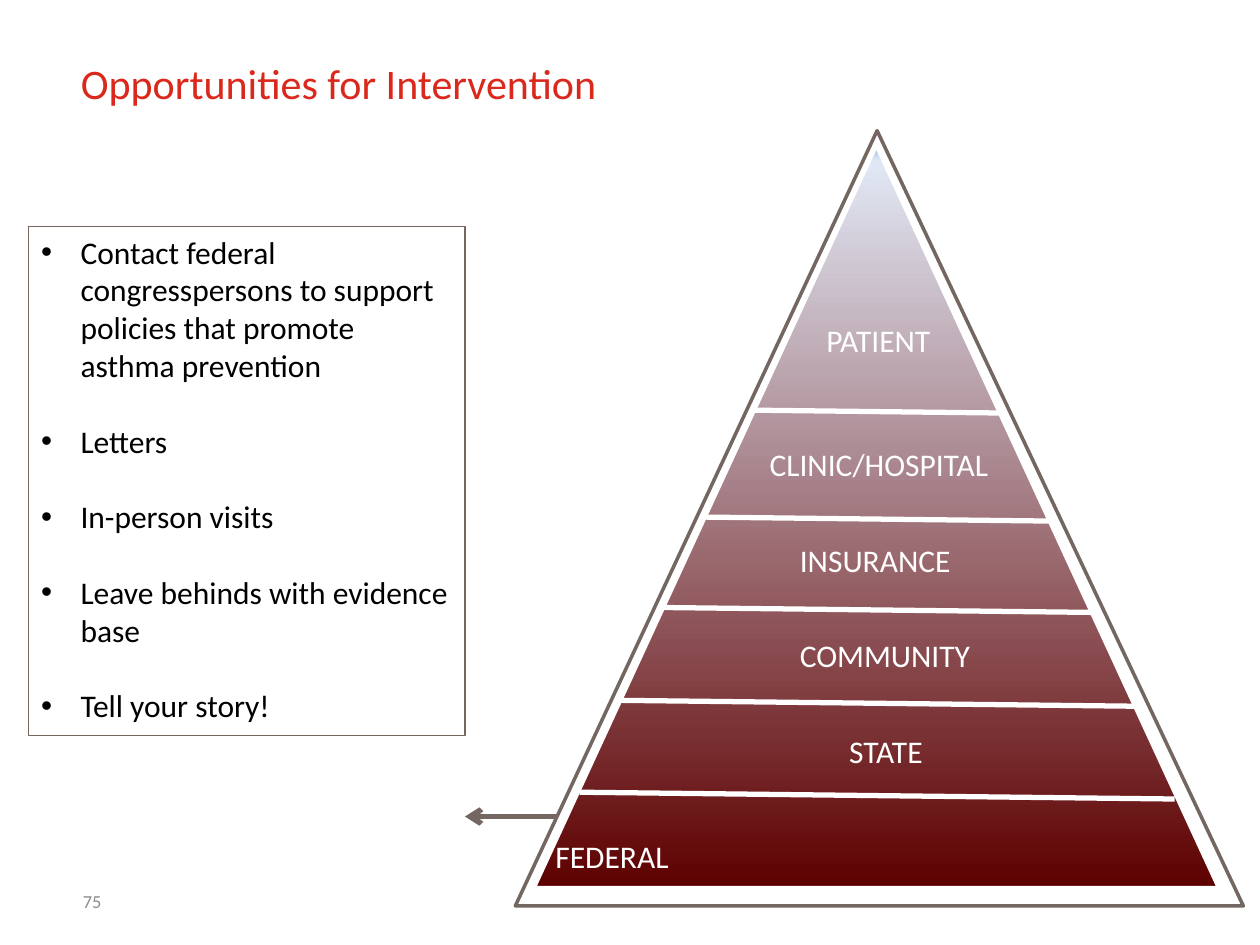
from lxml import etree
from pptx import Presentation
from pptx.dml.color import RGBColor
from pptx.enum.shapes import MSO_CONNECTOR, MSO_SHAPE
from pptx.enum.text import MSO_ANCHOR, PP_ALIGN
from pptx.oxml import parse_xml
from pptx.oxml.ns import nsdecls, qn
from pptx.util import Pt

STRAIGHT = MSO_CONNECTOR.STRAIGHT
TRIANGLE, RECTANGLE = MSO_SHAPE.ISOSCELES_TRIANGLE, MSO_SHAPE.RECTANGLE
TOP, MIDDLE = MSO_ANCHOR.TOP, MSO_ANCHOR.MIDDLE
LEFT = PP_ALIGN.LEFT

FONT = "Calibri"
COLORS = {
    "title": "DA291C", "text": "000000", "number": "8C8C8C",
    "outline": "746661", "white": "FFFFFF",
}
PYRAMID_GRADIENT = [(0, "9AB5E4"), (2, "E1E8F5"), (100, "5E0000")]

# Label, left, top and width inside the pyramid
LEVELS = [
    ("PATIENT", 170.6, 105, 76.3),
    ("CLINIC/HOSPITAL", 138.2, 176.3, 153.4),
    ("INSURANCE", 155.5, 231, 105),
    ("COMMUNITY", 155.5, 285, 116),
    ("STATE", 183.6, 339.8, 76.3),
    ("FEDERAL", 15.8, 400.3, 85),
]
# Left end of each divider inside the pyramid
DIVIDERS = [(75.6, 159), (64, 220.3), (53.3, 272.1), (42.5, 325.3), (36.7, 378)]
ACTIONS = [
    "Contact federal congresspersons to support policies that promote asthma prevention",
    "Letters",
    "In-person visits",
    "Leave behinds with evidence base",
    "Tell your story!",
]


def color(name):
    return RGBColor.from_string(COLORS[name])


def format_paragraph(paragraph, size, color_name):
    paragraph.alignment = LEFT
    paragraph.font.size = Pt(size)
    paragraph.font.name = FONT
    paragraph.font.color.rgb = color(color_name)


def add_outlined_shape(slide, kind, box, color_name, width):
    shape = slide.shapes.add_shape(kind, *map(Pt, box))
    shape.shadow.inherit = False
    shape.fill.background()
    shape.line.color.rgb = color(color_name)
    shape.line.width = Pt(width)
    return shape


def add_line(slide, start, end, color_name, width):
    line = slide.shapes.add_connector(STRAIGHT, *map(Pt, start + end))
    line.line.color.rgb = color(color_name)
    line.line.width = Pt(width)
    etree.SubElement(line._element.spPr, qn("a:effectLst"))
    return line


def add_label(slide, box, text, size, color_name, anchor=TOP):
    frame = slide.shapes.add_textbox(*map(Pt, box)).text_frame
    frame.word_wrap = True
    frame.vertical_anchor = anchor
    frame.text = text
    format_paragraph(frame.paragraphs[0], size, color_name)


def set_gradient(shape, stops):
    stop_xml = "".join(
        f'<a:gs pos="{position * 1000}"><a:srgbClr val="{value}"/></a:gs>'
        for position, value in stops)
    gradient = parse_xml(
        f'<a:gradFill {nsdecls("a")} rotWithShape="1"><a:gsLst>{stop_xml}</a:gsLst>'
        '<a:lin ang="5400000" scaled="0"/></a:gradFill>')
    properties = shape._element.spPr
    properties.replace(properties.find(qn("a:noFill")), gradient)


def set_title(slide, box):
    title = slide.shapes.title
    title.left, title.top, title.width, title.height = map(Pt, box)
    title.text_frame.text = "Opportunities for Intervention"
    title.text_frame.vertical_anchor = TOP
    format_paragraph(title.text_frame.paragraphs[0], 24, "title")


def add_pyramid(slide, box):
    left, top, width, height = box

    # Shaded body
    body_box = (left + 10.8, top + 8.6, 391, 424)
    body = add_outlined_shape(slide, TRIANGLE, body_box, "white", 2)
    set_gradient(body, PYRAMID_GRADIENT)

    # Sloping dividers
    for x, y in DIVIDERS:
        start = (left + x, top + y)
        add_line(slide, start, (start[0] + 340, start[1] + 3.9), "white", 3)

    # Level names
    for text, x, y, label_width in LEVELS:
        add_label(slide, (left + x, top + y, label_width, 29), text, 18, "white")

    # Outer frame
    frame = add_outlined_shape(slide, TRIANGLE, box, "outline", 2)
    frame.adjustments[0] = 0.497


def add_arrow(slide, start, end):
    arrow = add_line(slide, start, end, "outline", 3)
    etree.SubElement(arrow.line._get_or_add_ln(), qn("a:tailEnd"), type="arrow")


def add_action_box(slide, box):
    shape = add_outlined_shape(slide, RECTANGLE, box, "outline", 0.75)
    frame = shape.text_frame
    frame.word_wrap = True
    frame.vertical_anchor = TOP
    for index, text in enumerate(ACTIONS):
        paragraph = frame.paragraphs[0] if index == 0 else frame.add_paragraph()
        paragraph.text = text
        properties = paragraph._p.get_or_add_pPr()
        properties.set("marL", str(Pt(22.5)))
        properties.set("indent", str(-Pt(22.5)))
        etree.SubElement(properties, qn("a:buFont"), typeface="Arial")
        etree.SubElement(properties, qn("a:buChar"), char="•")
        if index:
            paragraph.space_before = Pt(21.6)
        format_paragraph(paragraph, 18, "text")


def main():
    presentation = Presentation()
    presentation.slide_width, presentation.slide_height = Pt(720), Pt(540)
    slide = presentation.slides.add_slide(presentation.slide_layouts[5])

    set_title(slide, (39, 29, 648, 52.5))
    add_label(slide, (40.3, 500.4, 168, 28.8), "75", 10.5, "number", MIDDLE)
    add_pyramid(slide, (294.5, 74.7, 416, 443))
    add_arrow(slide, (317.5, 466.6), (265.7, 466.6))
    add_action_box(slide, (16.4, 129.4, 249.3, 291))

    presentation.save("out.pptx")


if __name__ == "__main__":
    main()
